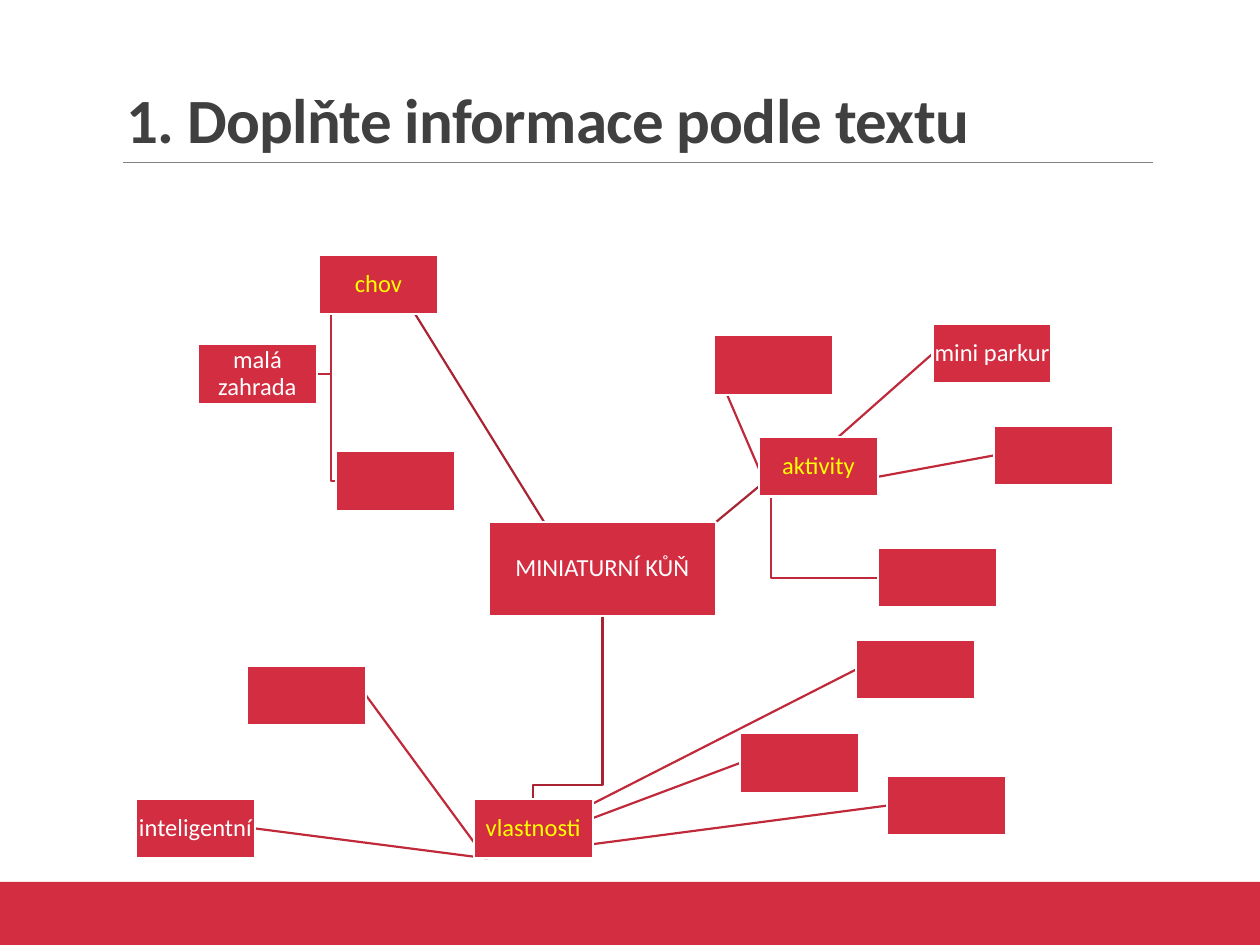
from dataclasses import dataclass

from lxml import etree
from pptx import Presentation
from pptx.dml.color import RGBColor
from pptx.enum.shapes import MSO_CONNECTOR, MSO_SHAPE
from pptx.enum.text import MSO_ANCHOR, MSO_AUTO_SIZE, PP_ALIGN
from pptx.oxml.ns import qn
from pptx.util import Cm, Pt

STRAIGHT = MSO_CONNECTOR.STRAIGHT
RECTANGLE = MSO_SHAPE.RECTANGLE
CENTER, LEFT_ALIGNED = PP_ALIGN.CENTER, PP_ALIGN.LEFT
MIDDLE, BOTTOM_ANCHOR = MSO_ANCHOR.MIDDLE, MSO_ANCHOR.BOTTOM
NO_AUTOFIT = MSO_AUTO_SIZE.NONE

TOP, LEFT, BOTTOM, RIGHT = range(4)  # connection sites of a rectangle
FONT = "Calibri"
RED, WHITE, YELLOW = "D22D40", "FFFFFF", "FFFF00"
MAIN_LINE, BRANCH_LINE = "A82433", "BF293A"
TITLE_COLOR, RULE_COLOR = "404040", "808080"
LINE_WIDTH = 1.25


@dataclass
class Box:
    left: float
    top: float
    text: str = ""
    color: str = WHITE
    width: float = 2.4
    height: float = 1.2

    @property
    def center_x(self) -> float:
        return self.left + self.width / 2

    @property
    def center_y(self) -> float:
        return self.top + self.height / 2

    @property
    def bottom(self) -> float:
        return self.top + self.height

    @property
    def foot(self) -> tuple:
        """Point on the lower edge where the branches of a topic start."""
        return self.left + self.width / 10, self.bottom


@dataclass
class Child:
    box: Box
    side: int
    bent: bool = False


@dataclass
class Topic:
    box: Box
    children: list
    bent: bool = False


CORE = Box(9.86, 10.52, "MINIATURNÍ KŮŇ", width=4.57, height=1.9)
TOPICS = [
    Topic(Box(6.43, 5.14, "chov", YELLOW), [
        Child(Box(3.99, 6.94, "malá zahrada"), RIGHT, bent=True),
        Child(Box(6.78, 9.1), LEFT, bent=True),
    ]),
    Topic(Box(9.55, 16.1, "vlastnosti", YELLOW), [
        Child(Box(2.74, 16.1, "inteligentní"), RIGHT),
        Child(Box(4.98, 13.42), RIGHT),
        Child(Box(17.88, 15.64), LEFT),
        Child(Box(17.25, 12.9), LEFT),
        Child(Box(14.92, 14.78), LEFT),
    ], bent=True),
    Topic(Box(15.3, 8.81, "aktivity", YELLOW), [
        Child(Box(18.8, 6.53, "mini parkur"), LEFT),
        Child(Box(14.4, 6.76), LEFT),
        Child(Box(20.04, 8.58), LEFT),
        Child(Box(17.7, 11.05), LEFT, bent=True),
    ]),
]


def rgb(color: str) -> RGBColor:
    return RGBColor.from_string(color)


def set_line(shape, color: str, width: float) -> None:
    shape.line.color.rgb = rgb(color)
    shape.line.width = Pt(width)


def format_text(paragraph, size: float, color: str, alignment, spacing: float) -> None:
    paragraph.alignment = alignment
    paragraph.line_spacing = spacing
    for run in paragraph.runs:
        run.font.name = FONT
        run.font.size = Pt(size)
        run.font.color.rgb = rgb(color)


def add_rectangle(slide, left: float, top: float, width: float, height: float):
    shape = slide.shapes.add_shape(RECTANGLE, Cm(left), Cm(top), Cm(width), Cm(height))
    shape.shadow.inherit = False
    shape.fill.solid()
    shape.fill.fore_color.rgb = rgb(RED)
    shape.line.fill.background()
    return shape


def add_box(slide, box: Box):
    shape = add_rectangle(slide, box.left, box.top, box.width, box.height)
    set_line(shape, WHITE, LINE_WIDTH)
    if box.text:
        frame = shape.text_frame
        frame.text = box.text
        frame.word_wrap = True
        frame.vertical_anchor = MIDDLE
        frame.margin_left = frame.margin_right = Cm(0.03)
        frame.margin_top = frame.margin_bottom = Cm(0.03)
        format_text(frame.paragraphs[0], 14, box.color, CENTER, 0.9)
    return shape


def add_line(slide, start: tuple, end: tuple, color: str, width: float):
    points = [Cm(value) for value in (*start, *end)]
    connector = slide.shapes.add_connector(STRAIGHT, *points)
    set_line(connector, color, width)
    etree.SubElement(connector._element.spPr, qn("a:effectLst"))
    return connector


def add_bent_line(slide, points: list, color: str):
    corners = [(Cm(x), Cm(y)) for x, y in points]
    builder = slide.shapes.build_freeform(*corners[0])
    builder.add_line_segments(corners[1:], close=False)
    shape = builder.convert_to_shape()
    shape.shadow.inherit = False
    shape.fill.background()
    set_line(shape, color, LINE_WIDTH)
    return shape


def link_topic(slide, topic: Topic, core_shape, topic_shape):
    start = CORE.center_x, CORE.bottom
    end = topic.box.center_x, topic.box.top
    if topic.bent:
        turn = topic.box.top - 0.27
        corners = [start, (start[0], turn), (end[0], turn), end]
        return add_bent_line(slide, corners, MAIN_LINE)
    connector = add_line(slide, start, end, MAIN_LINE, LINE_WIDTH)
    connector.begin_connect(core_shape, BOTTOM)
    connector.end_connect(topic_shape, TOP)
    return connector


def link_child(slide, topic: Topic, child: Child, child_shape):
    start, box = topic.box.foot, child.box
    end = box.left + (box.width if child.side == RIGHT else 0), box.center_y
    if child.bent:
        return add_bent_line(slide, [start, (start[0], end[1]), end], BRANCH_LINE)
    connector = add_line(slide, start, end, BRANCH_LINE, LINE_WIDTH)
    connector.end_connect(child_shape, child.side)
    return connector


def add_mind_map(slide) -> None:
    core_shape = add_box(slide, CORE)
    links = []
    for topic in TOPICS:
        topic_shape = add_box(slide, topic.box)
        links.append(link_topic(slide, topic, core_shape, topic_shape))
        for child in topic.children:
            child_shape = add_box(slide, child.box)
            links.append(link_child(slide, topic, child, child_shape))
    for link in links:  # lines lie behind all boxes
        core_shape._element.addprevious(link._element)


def add_title(slide, text: str) -> None:
    title = slide.shapes.title
    title.left, title.top, title.width, title.height = Cm(2.29), Cm(0.73), Cm(20.95), Cm(2.55)
    frame = title.text_frame
    frame.text = text
    frame.auto_size = NO_AUTOFIT
    frame.vertical_anchor = BOTTOM_ANCHOR
    format_text(frame.paragraphs[0], 36, TITLE_COLOR, LEFT_ALIGNED, 0.85)
    font = frame.paragraphs[0].runs[0].font
    font.bold = True
    font._element.set("spc", "-40")


def main() -> None:
    presentation = Presentation()
    presentation.slide_width, presentation.slide_height = Cm(25.4), Cm(19.05)
    slide = presentation.slides.add_slide(presentation.slide_layouts[5])
    add_rectangle(slide, 0, 17.78, 25.4, 1.27)
    add_line(slide, (2.48, 3.28), (23.24, 3.28), RULE_COLOR, 0.5)
    add_title(slide, "1. Doplňte informace podle textu")
    add_mind_map(slide)
    presentation.save("out.pptx")


if __name__ == "__main__":
    main()
